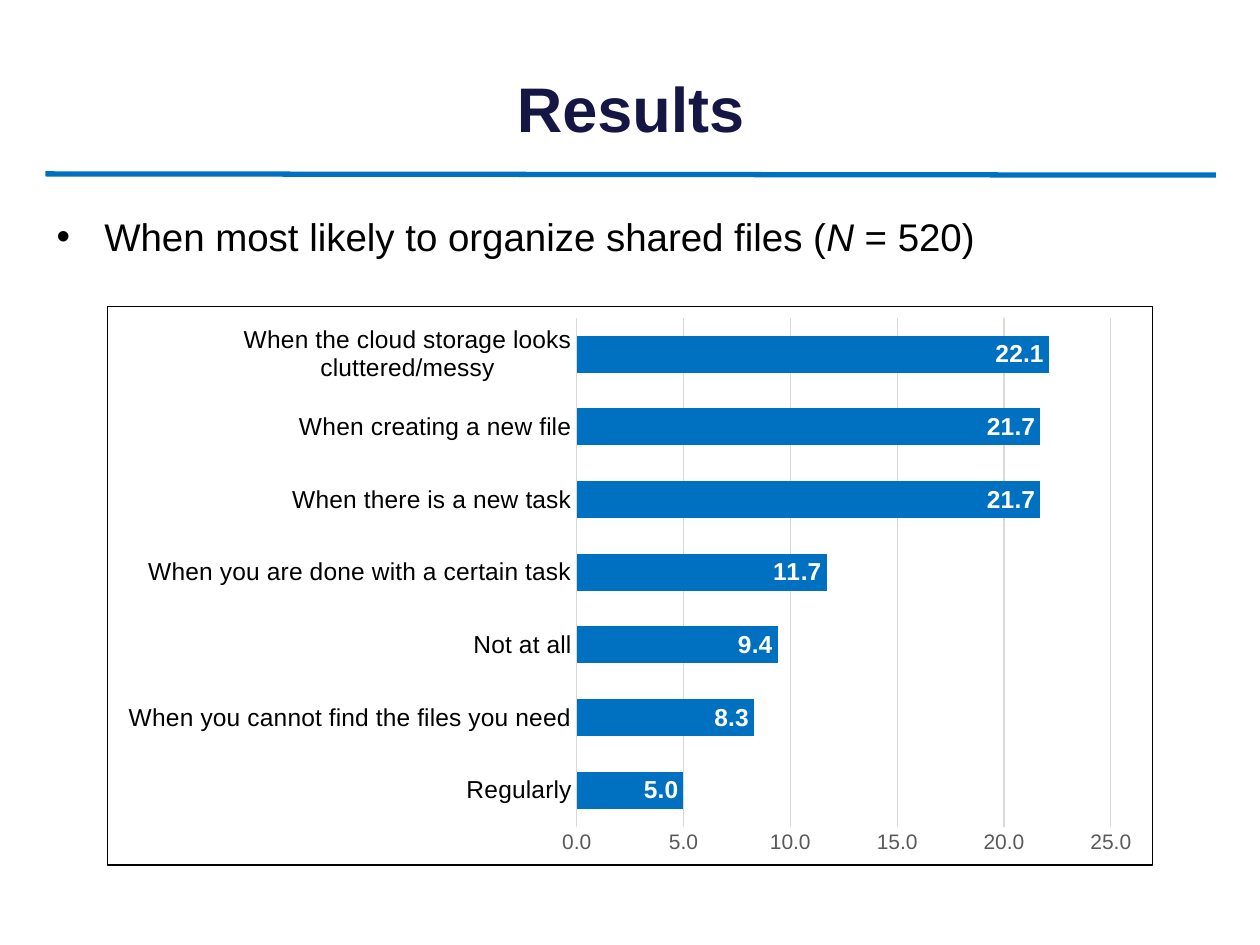
from lxml import etree
from pptx import Presentation
from pptx.chart.data import CategoryChartData as ChartData
from pptx.dml.color import RGBColor
from pptx.enum.chart import XL_CHART_TYPE as Kind, XL_LABEL_POSITION as Spot, XL_TICK_MARK as Tick
from pptx.enum.shapes import MSO_CONNECTOR as Link
from pptx.enum.text import MSO_ANCHOR as Anchor, PP_ALIGN as Align
from pptx.oxml import parse_xml
from pptx.oxml.ns import nsdecls, qn
from pptx.util import Inches, Pt

NAVY = RGBColor(0x16, 0x16, 0x45)
BLUE = RGBColor(0x00, 0x70, 0xC0)
BLACK = RGBColor(0x00, 0x00, 0x00)
WHITE = RGBColor(0xFF, 0xFF, 0xFF)
GRAY = RGBColor(0x59, 0x59, 0x59)
PALE = RGBColor(0xD9, 0xD9, 0xD9)
FACE = "Arial"

RATES = {
    "Regularly": 5.0,
    "When you cannot find the files you need": 8.3,
    "Not at all": 9.4,
    "When you are done with a certain task": 11.7,
    "When there is a new task": 21.7,
    "When creating a new file": 21.7,
    "When the cloud storage looks cluttered/messy": 22.1,
}


def set_font(font, size, color, bold=False):
    font.name = FACE
    font.size = Pt(size)
    font.bold = bold
    font.color.rgb = color


def set_line(line, color, width):
    line.color.rgb = color
    line.width = Pt(width)


def add_title(slide, text):
    title = slide.shapes.title
    title.left, title.top = Inches(0.36), Inches(0.35)
    title.width, title.height = Inches(9.29), Inches(1.01)
    frame = title.text_frame
    frame.text = text
    frame.vertical_anchor = Anchor.MIDDLE
    para = frame.paragraphs[0]
    para.alignment = Align.CENTER
    set_font(para.runs[0].font, 36, NAVY, True)


def add_rule(slide):
    rule = slide.shapes.add_connector(
        Link.STRAIGHT, Inches(0.36), Inches(1.38), Inches(9.65), Inches(1.39))
    set_line(rule.line, BLUE, 3)
    props = rule.element.find(qn("p:spPr"))
    etree.SubElement(props, qn("a:effectLst"))


def add_bullet(slide, parts):
    box = slide.shapes.add_textbox(
        Inches(0.23), Inches(1.64), Inches(9.55), Inches(0.6))
    frame = box.text_frame
    frame.word_wrap = True
    para = frame.paragraphs[0]
    para.space_before = Pt(3.6)
    for text, slant in parts:
        run = para.add_run()
        run.text = text
        set_font(run.font, 22, BLACK)
        run.font.italic = slant
    props = para.runs[0].font._element.getparent().getparent().get_or_add_pPr()
    props.set("marL", str(Inches(0.5)))
    props.set("indent", str(Inches(-0.38)))
    etree.SubElement(props, qn("a:buFont")).set("typeface", FACE)
    etree.SubElement(props, qn("a:buChar")).set("char", "•")


def add_border(chart, color, width):
    props = parse_xml(
        f'<c:spPr {nsdecls("c", "a")}><a:noFill/><a:ln w="{Pt(width)}">'
        f'<a:solidFill><a:srgbClr val="{color}"/></a:solidFill></a:ln></c:spPr>')
    chart.element.find(qn("c:chart")).addnext(props)


def style_axis(axis, size, color):
    axis.major_tick_mark = axis.minor_tick_mark = Tick.NONE
    set_font(axis.tick_labels.font, size, color)


def add_bars(slide, rates):
    data = ChartData(number_format="0.0")
    data.categories = list(rates)
    data.add_series("Series 1", list(rates.values()))
    chart = slide.shapes.add_chart(
        Kind.BAR_CLUSTERED, Inches(0.85), Inches(2.43),
        Inches(8.3), Inches(4.44), data).chart
    chart.has_title = False
    chart.has_legend = False
    set_font(chart.font, 10, BLACK)
    add_border(chart, BLACK, 0.75)

    cats, vals = chart.category_axis, chart.value_axis
    style_axis(cats, 14, BLACK)
    set_line(cats.format.line, PALE, 0.75)
    style_axis(vals, 12, GRAY)
    vals.format.line.fill.background()
    vals.has_major_gridlines = True
    set_line(vals.major_gridlines.format.line, PALE, 0.75)
    vals.tick_labels.number_format = "0.0"
    vals.tick_labels.number_format_is_linked = False

    plot = chart.plots[0]
    plot.gap_width = 95
    plot.vary_by_categories = False
    fill = plot.series[0].format.fill
    fill.solid()
    fill.fore_color.rgb = BLUE
    plot.has_data_labels = True
    labels = plot.data_labels
    labels.show_value = True
    labels.position = Spot.INSIDE_END
    labels.number_format = "0.0"
    labels.number_format_is_linked = False
    set_font(labels.font, 14, WHITE, True)


def main():
    deck = Presentation()
    deck.slide_width, deck.slide_height = Inches(10), Inches(7.5)
    slide = deck.slides.add_slide(deck.slide_layouts[5])
    add_title(slide, "Results")
    add_rule(slide)
    add_bullet(slide, [
        ("When most likely to organize shared files (", False),
        ("N", True),
        (" = 520)", False),
    ])
    add_bars(slide, RATES)
    deck.save("out.pptx")


if __name__ == "__main__":
    main()
